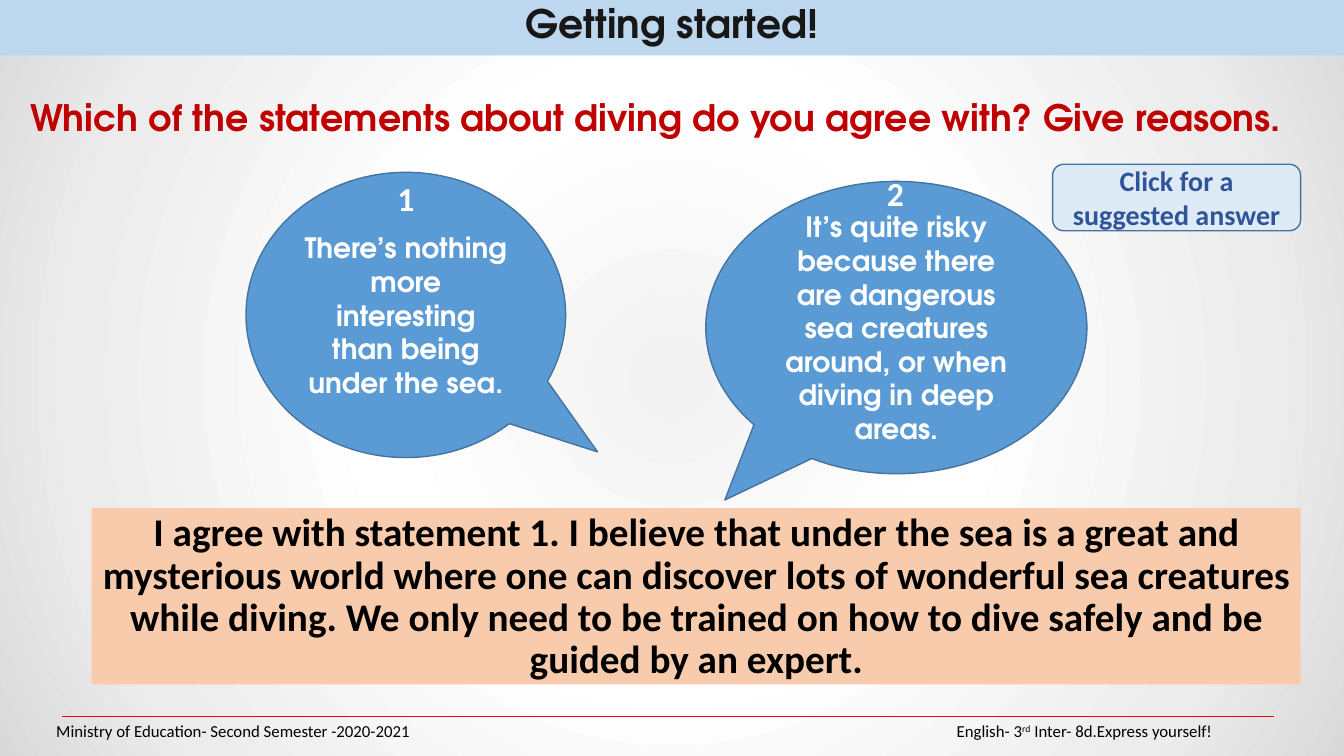
from dataclasses import dataclass

from lxml.etree import SubElement as Sub
from pptx import Presentation
from pptx.dml.color import RGBColor as RGB
from pptx.enum.shapes import MSO_CONNECTOR as Link, MSO_SHAPE as Kind
from pptx.enum.text import MSO_ANCHOR as Anchor, MSO_AUTO_SIZE as Fit, PP_ALIGN as Align
from pptx.oxml.ns import qn
from pptx.util import Inches, Pt


@dataclass(frozen=True)
class Theme:
    head: str = "TeX Gyre Adventor"
    body: str = "Calibri"
    ink: str = "181717"
    black: str = "000000"
    white: str = "FFFFFF"
    red: str = "C00000"
    rule: str = "FF0000"
    bar: str = "BDD7EE"
    peach: str = "F8CBAD"
    blue: str = "5B9BD5"
    edge: str = "43739E"
    pale: str = "DEEBF7"
    navy: str = "2F5597"
    glow: tuple = ((0, "F2F2F2"), (39, "FFFFFF"), (78, "ECECEC"), (100, "D9D9D9"))
    big: int = 28
    ask: int = 26
    num: int = 24
    mid: int = 20
    small: int = 12


class Deck:
    """Draws styled elements on the current slide."""

    def __init__(self, theme):
        self.theme = theme
        self.file = Presentation()
        self.file.slide_width, self.file.slide_height = Inches(13.33), Inches(7.5)
        self.slide = self.file.slides.add_slide(self.file.slide_layouts[5])
        self.shapes = self.slide.shapes

    def glow(self):
        self.slide.background.fill.solid()
        props = self.slide.element.find(".//" + qn("p:bgPr"))
        props.remove(props[0])
        grad = props.makeelement(qn("a:gradFill"), {"rotWithShape": "1"})
        props.insert(0, grad)
        stops = Sub(grad, qn("a:gsLst"))
        for spot, color in self.theme.glow:
            stop = Sub(stops, qn("a:gs"), pos=str(spot * 1000))
            Sub(stop, qn("a:srgbClr"), val=color)
        ring = Sub(grad, qn("a:path"), {"path": "circle"})
        Sub(ring, qn("a:fillToRect"), {side: "50000" for side in "ltrb"})

    def letter(self, shape, text, size, color, font, bold=True,
               align=Align.CENTER, anchor=Anchor.MIDDLE, tight=False):
        frame = shape.text_frame
        frame.word_wrap, frame.auto_size = True, Fit.NONE
        frame.vertical_anchor = anchor
        para = frame.paragraphs[0]
        para.text, para.alignment = text, align
        face = para.font
        face.name, face.size, face.bold = font, Pt(size), bold
        face.color.rgb = RGB.from_string(color)
        if tight:
            para.line_spacing, para.space_before = 0.9, Pt(10)
        return para

    def paint(self, shape, fill):
        shape.fill.solid()
        shape.fill.fore_color.rgb = RGB.from_string(fill)

    def title(self, text, *box):
        shape = self.shapes.title
        shape.left, shape.top, shape.width, shape.height = map(Inches, box)
        self.paint(shape, self.theme.bar)
        self.letter(shape, text, self.theme.big, self.theme.ink, self.theme.head,
                    anchor=Anchor.TOP, tight=True)

    def label(self, box, text, size, color, font, **look):
        shape = self.shapes.add_textbox(*map(Inches, box))
        return self.letter(shape, text, size, color, font, **look)

    def shape(self, kind, box, text, size, color, font,
              fill=None, edge=None, home=None, **look):
        shape = (home or self.shapes).add_shape(kind, *map(Inches, box))
        shape.shadow.inherit = False
        if fill:
            self.paint(shape, fill)
        else:
            shape.fill.background()
        if edge:
            shape.line.color.rgb = RGB.from_string(edge)
            shape.line.width = Pt(1)
        else:
            shape.line.fill.background()
        self.letter(shape, text, size, color, font, **look)
        return shape

    def bubble(self, box, tail, text, spot, num):
        look, home = self.theme, self.shapes.add_group_shape().shapes
        shape = self.shape(Kind.OVAL_CALLOUT, box, text, look.mid, look.white,
                           look.head, look.blue, look.edge, home)
        shape.adjustments[0], shape.adjustments[1] = tail
        self.shape(Kind.OVAL, spot, num, look.num, look.white, look.body, home=home)

    def line(self, left, right, top, color):
        ends = map(Inches, (left, top, right, top))
        rule = self.shapes.add_connector(Link.STRAIGHT, *ends)
        rule.line.color.rgb = RGB.from_string(color)
        rule.line.width = Pt(0.75)
        Sub(rule.element.spPr, qn("a:effectLst"))

    def foot(self):
        look = self.theme
        style = look.small, look.black, look.body
        self.line(0.62, 12.64, 7.11, look.rule)
        self.label((0.46, 7.08, 5, 0.34), "Ministry of Education- Second Semester -2020-2021",
                   *style, bold=False, align=Align.LEFT)
        para = self.label((9.39, 7.08, 3.4, 0.34), "English- 3", *style,
                          bold=False, align=Align.LEFT)
        rank = para.add_run()
        rank.text = "rd"
        rank.font._element.set("baseline", "30000")
        para.add_run().text = " Inter- 8d.Express yourself!"


def main():
    look = Theme()
    deck = Deck(look)
    deck.glow()
    deck.title("Getting started!", 0, 0, 13.33, 0.55)
    deck.foot()
    deck.label((0.2, 0.75, 12.93, 0.81),
               "Which of the statements about diving do you agree with? Give reasons.",
               look.ask, look.red, look.head, align=Align.LEFT)
    deck.shape(Kind.RECTANGLE, (0.91, 5.04, 11.99, 1.75),
               "I agree with statement 1. I believe that under the sea is a great and "
               "mysterious world where one can discover lots of wonderful sea creatures "
               "while diving. We only need to be trained on how to dive safely and be "
               "guided by an expert.",
               look.big, look.black, look.body, look.peach, anchor=Anchor.TOP, tight=True)
    deck.bubble((2.44, 1.71, 3.17, 2.83), (0.6, 0.48),
                "There’s nothing more interesting than being under the sea.",
                (3.43, 1.74, 1.19, 0.46), "1")
    deck.bubble((7, 1.8, 3.78, 2.9), (-0.45, 0.59),
                "It’s quite risky because there are dangerous sea creatures around, "
                "or when diving in deep areas.",
                (8.56, 1.69, 0.64, 0.46), "2")
    deck.shape(Kind.ROUNDED_RECTANGLE, (10.44, 1.63, 2.46, 0.66),
               "Click for a suggested answer",
               look.mid, look.navy, look.body, look.pale, look.edge)
    deck.file.save("out.pptx")


if __name__ == "__main__":
    main()
